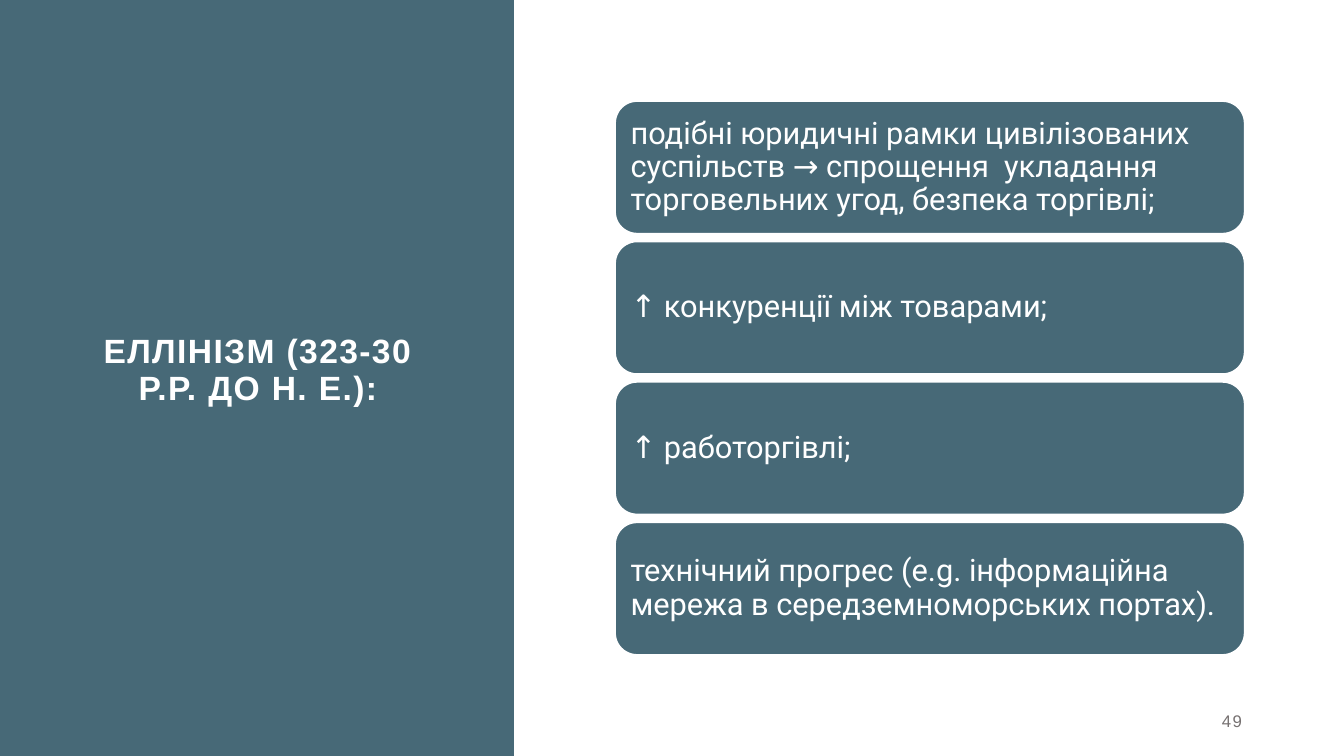
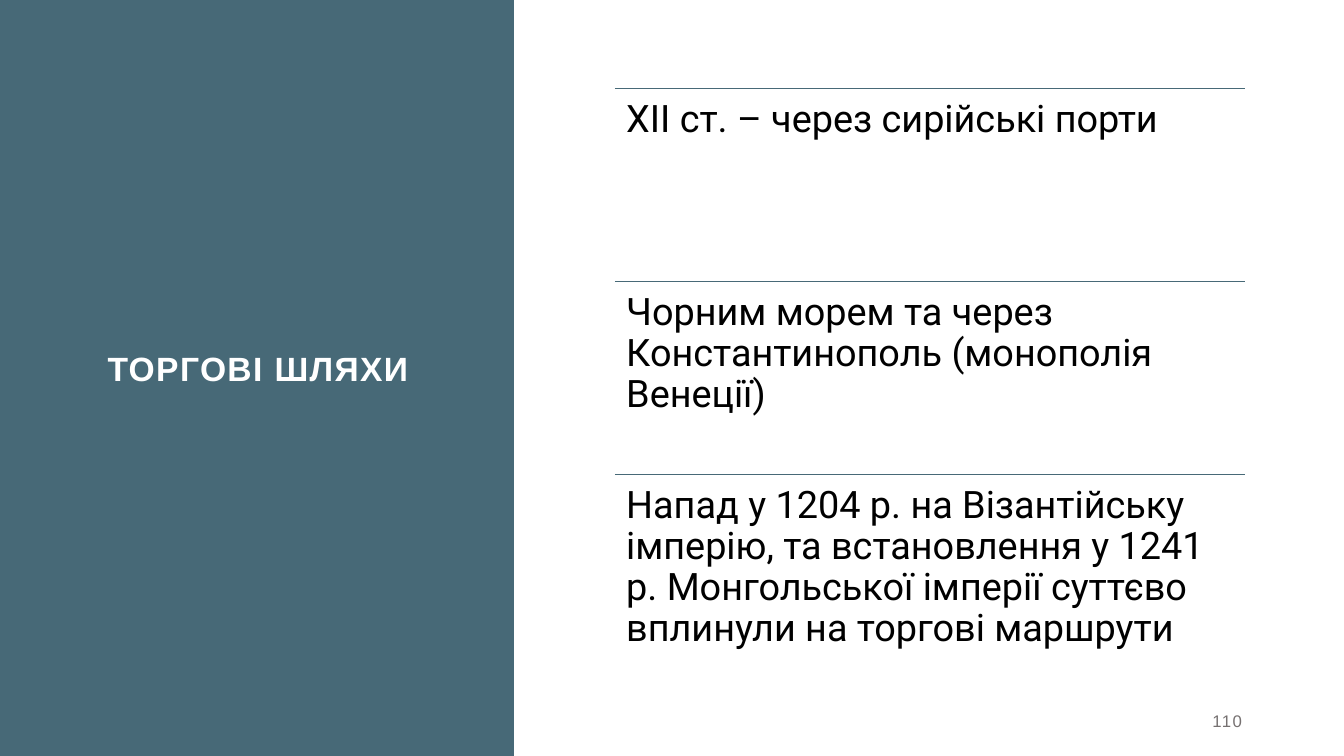
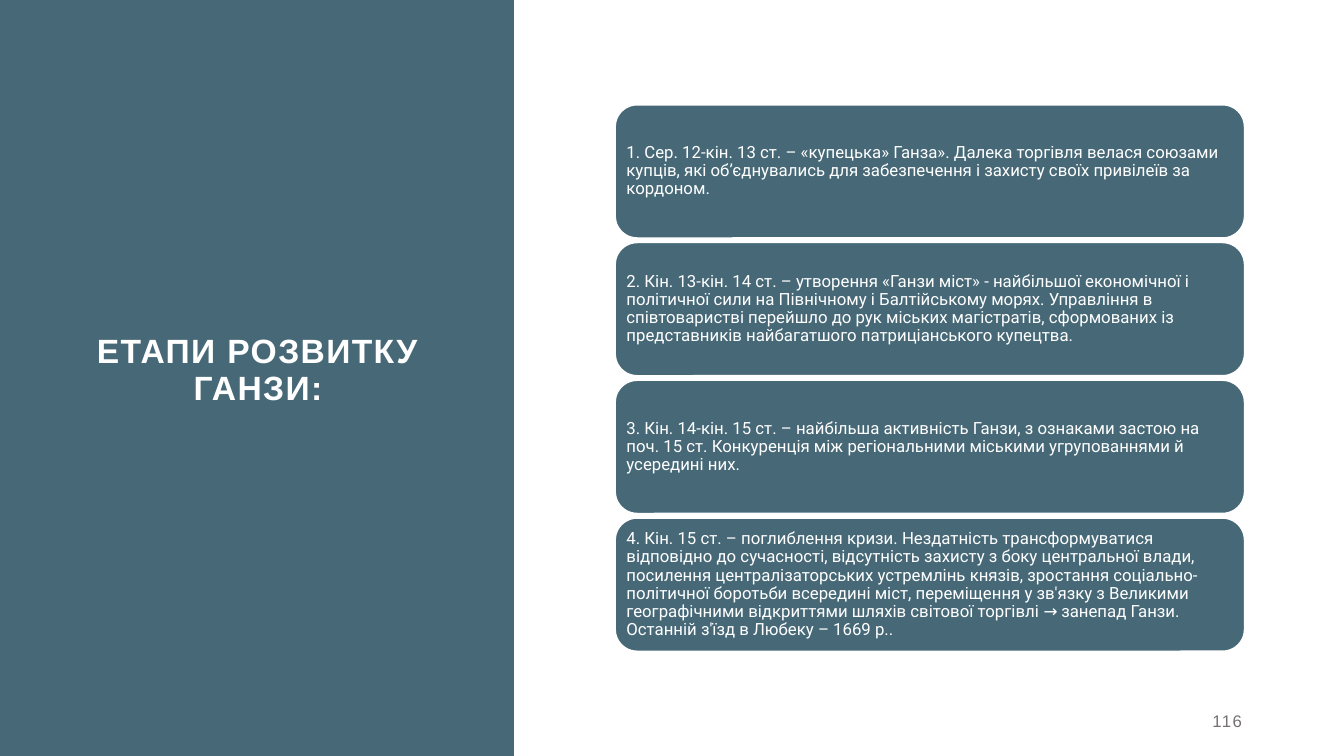
from pptx import Presentation
from pptx.dml.color import RGBColor
from pptx.enum import shapes, text
from pptx.oxml import xmlchemy
from pptx.util import Pt

TEAL, WHITE, BLACK, GRAY = "476977", "FFFFFF", "000000", "767171"
HEADING, BODY = "Arial", "Roboto"
WIDTH, HEIGHT = 960, 540
BAND_WIDTH = 367.2
LEFT, COLUMN = 439.2, 450


def color(value):
    return RGBColor.from_string(value)


def stack_tops(count, height, gap):
    top = (HEIGHT - count * height - (count - 1) * gap) / 2
    return [top + index * (height + gap) for index in range(count)]


class Deck:
    """Hold the shared style and the slide being built."""

    def __init__(self):
        self.prs = Presentation()
        self.prs.slide_width, self.prs.slide_height = Pt(WIDTH), Pt(HEIGHT)

    def start(self, title, number):
        self.slide = self.prs.slides.add_slide(self.prs.slide_layouts[6])
        self.shape(shapes.MSO_SHAPE.RECTANGLE, 0, 0, BAND_WIDTH, HEIGHT)
        heading = self.label(title, 50.4, 63.4, 267.8, 403.2, 24, WHITE,
                             text.PP_ALIGN.CENTER)
        heading.line_spacing = 0.9
        heading.font.bold = True
        self.label(number, 678.2, 500.4, 216, 28.8, 12, GRAY, text.PP_ALIGN.RIGHT)

    def shape(self, preset, left, top, width, height):
        shape = self.slide.shapes.add_shape(preset, Pt(left), Pt(top), Pt(width), Pt(height))
        shape.shadow.inherit = False
        shape.fill.solid()
        shape.fill.fore_color.rgb = color(TEAL)
        shape.line.fill.background()
        return shape

    def textbox(self, left, top, width, height):
        return self.slide.shapes.add_textbox(Pt(left), Pt(top), Pt(width), Pt(height)).text_frame

    def set_text(self, frame, words, size, ink, face, align, anchor):
        frame.word_wrap = True
        frame.vertical_anchor = anchor
        paragraph = frame.paragraphs[0]
        paragraph.text = words
        paragraph.alignment = align
        paragraph.font.size = Pt(size)
        paragraph.font.name = face
        paragraph.font.color.rgb = color(ink)
        return paragraph

    def label(self, words, left, top, width, height, size, ink, align):
        frame = self.textbox(left, top, width, height)
        paragraph = self.set_text(frame, words, size, ink, HEADING, align,
                                  text.MSO_ANCHOR.MIDDLE)
        paragraph.space_after = Pt(6)
        paragraph._p.get_or_add_pPr().get_or_add_defRPr().set("spc", "100")
        return paragraph

    def body(self, frame, words, size, ink, anchor):
        inset = Pt(size * 0.3)
        frame.margin_left = frame.margin_right = inset
        frame.margin_top = frame.margin_bottom = inset
        paragraph = self.set_text(frame, words, size, ink, BODY, text.PP_ALIGN.LEFT, anchor)
        paragraph.line_spacing = 0.9

    def cards(self, items, size, height, gap):
        for words, top in zip(items, stack_tops(len(items), height, gap)):
            card = self.shape(shapes.MSO_SHAPE.ROUNDED_RECTANGLE, LEFT, top, COLUMN, height)
            card.line.color.rgb = color(WHITE)
            card.line.width = Pt(1.5)
            self.body(card.text_frame, words, size, WHITE, text.MSO_ANCHOR.MIDDLE)

    def ruled_list(self, items, size, height):
        for words, top in zip(items, stack_tops(len(items), height, 0)):
            self.rule(top)
            frame = self.textbox(LEFT, top, COLUMN, height)
            self.body(frame, words, size, BLACK, text.MSO_ANCHOR.TOP)

    def rule(self, top):
        rule = self.slide.shapes.add_connector(
            shapes.MSO_CONNECTOR.STRAIGHT, Pt(LEFT), Pt(top), Pt(LEFT + COLUMN), Pt(top))
        rule.line.color.rgb = color(TEAL)
        rule.line.width = Pt(1)
        rule._element.spPr.append(xmlchemy.OxmlElement("a:effectLst"))


def main():
    deck = Deck()

    deck.start("ЕЛЛІНІЗМ (323-30 Р.Р. ДО Н. Е.):", "49")
    deck.cards([
        "подібні юридичні рамки цивілізованих суспільств → спрощення  укладання "
        "торговельних угод, безпека торгівлі;",
        "↑ конкуренції між товарами;",
        "↑ работоргівлі;",
        "технічний прогрес (e.g. інформаційна мережа в середземноморських портах).",
    ], size=22, height=95, gap=5.3)

    deck.start("ТОРГОВІ ШЛЯХИ", "110")
    deck.ruled_list([
        "XII ст. – через сирійські порти",
        "Чорним морем та через Константинополь (монополія Венеції)",
        "Напад у 1204 р. на Візантійську імперію, та встановлення у 1241 р. "
        "Монгольської імперії суттєво вплинули на торгові маршрути",
    ], size=27, height=137.8)

    deck.start("ЕТАПИ РОЗВИТКУ ГАНЗИ:", "116")
    deck.cards([
        "1. Сер. 12-кін. 13 ст. – «купецька» Ганза». Далека торгівля велася союзами "
        "купців, які об’єднувались для забезпечення і захисту своїх привілеїв за кордоном.",
        "2. Кін. 13-кін. 14 ст. – утворення «Ганзи міст» - найбільшої економічної і "
        "політичної сили на Північному і Балтійському морях. Управління в співтоваристві "
        "перейшло до рук міських магістратів, сформованих із представників найбагатшого "
        "патриціанського купецтва.",
        "3. Кін. 14-кін. 15 ст. – найбільша активність Ганзи, з ознаками застою на поч. "
        "15 ст. Конкуренція між регіональними міськими угрупованнями й усередині них.",
        "4. Кін. 15 ст. – поглиблення кризи. Нездатність трансформуватися відповідно до "
        "сучасності, відсутність захисту з боку центральної влади, посилення "
        "централізаторських устремлінь князів, зростання соціально-політичної боротьби "
        "всередині міст, переміщення у зв'язку з Великими географічними відкриттями "
        "шляхів світової торгівлі → занепад Ганзи. Останній з'їзд в Любеку – 1669 р..",
    ], size=12, height=95.6, gap=2.8)

    deck.prs.save("out.pptx")


if __name__ == "__main__":
    main()
